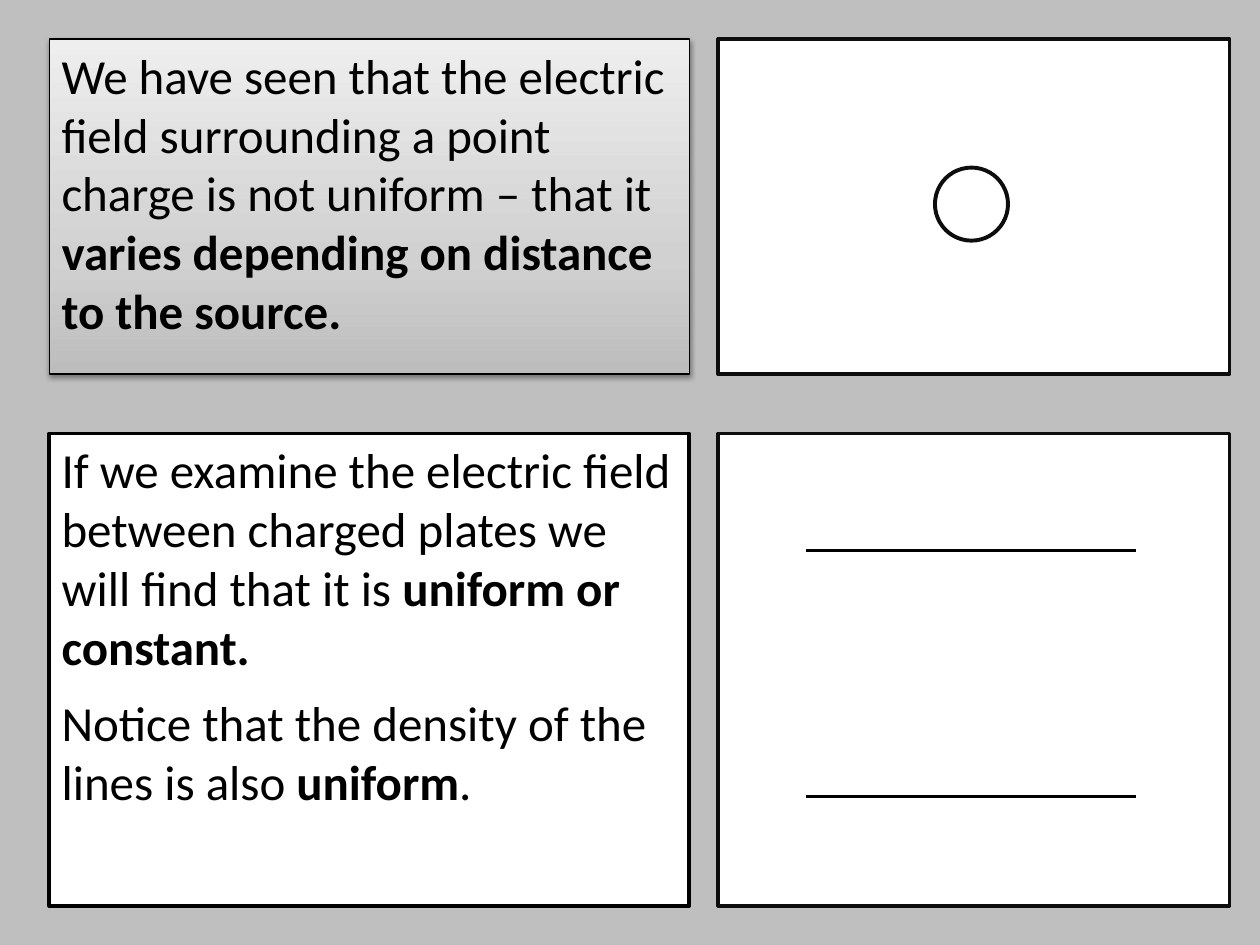
from copy import deepcopy

from lxml.etree import SubElement
from pptx import Presentation
from pptx.dml.color import RGBColor
from pptx.enum.shapes import MSO_CONNECTOR, MSO_SHAPE
from pptx.enum.text import MSO_ANCHOR, PP_ALIGN
from pptx.oxml import parse_xml
from pptx.oxml.ns import nsdecls, qn
from pptx.util import Inches, Pt

BLACK = RGBColor(0x00, 0x00, 0x00)
INK = RGBColor(0x0D, 0x0D, 0x0D)
WHITE = RGBColor(0xFF, 0xFF, 0xFF)
BACKGROUND = RGBColor(0xBF, 0xBF, 0xBF)
GRADIENT = [
    (0, RGBColor(0xBD, 0xBD, 0xBD)),
    (0.35, RGBColor(0xD1, 0xD1, 0xD1)),
    (1, RGBColor(0xEE, 0xEE, 0xEE)),
]

# Each paragraph is a list of (text, bold) runs.
POINT_CHARGE = [
    [("We have seen that the electric field surrounding a point charge "
      "is not uniform – that it ", False),
     ("varies depending on distance to the source.", True)],
]
CHARGED_PLATES = [
    [("If we examine the electric field between charged plates "
      "we will find that it is ", False),
     ("uniform or constant.", True)],
    [("Notice that the density of the lines is also ", False),
     ("uniform", True), (".", False)],
]

# Columns are (left, width), rows are (top, height), in inches.
TEXT_COL, DIAGRAM_COL = (0.39, 5.08), (5.7, 4.06)
TOP_ROW, BOTTOM_ROW = (0.31, 2.66), (3.44, 3.75)
CHARGE_LEFT, CHARGE_TOP, CHARGE_SIZE = 7.42, 1.33, 0.58
PLATE_LEFT, PLATE_RIGHT = 6.4, 9.02
PLATE_HEIGHTS = (4.37, 6.32)


def add_outlined(s, kind, col, row, line=INK, width=2):
    (left, w), (top, h) = col, row
    sp = s.shapes.add_shape(kind, *map(Inches, (left, top, w, h)))
    sp.shadow.inherit = False
    sp.fill.solid()
    sp.fill.fore_color.rgb = WHITE
    sp.line.color.rgb = line
    sp.line.width = Pt(width)
    return sp


def write_text(sp, paragraphs, size=28, font="Calibri", color=BLACK, after=10):
    tf = sp.text_frame
    tf.word_wrap = True
    tf.vertical_anchor = MSO_ANCHOR.TOP
    for i, runs in enumerate(paragraphs):
        p = tf.add_paragraph() if i else tf.paragraphs[0]
        p.alignment = PP_ALIGN.LEFT
        p.space_after = Pt(after)
        for text, bold in runs:
            r = p.add_run()
            r.text = text
            r.font.name = font
            r.font.size = Pt(size)
            r.font.bold = bold
            r.font.color.rgb = color


def shade(sp):
    """Fill with the upward grey gradient and add a soft shadow below."""
    sp.fill.gradient()
    sp.fill.gradient_angle = 90
    spPr = sp._element.spPr
    stops = spPr.find(qn("a:gradFill")).find(qn("a:gsLst"))
    stops.insert(1, deepcopy(stops[0]))
    for stop, (position, color) in zip(sp.fill.gradient_stops, GRADIENT):
        stop.position = position
        stop.color.rgb = color
    spPr.find(qn("a:effectLst")).append(parse_xml(
        f'<a:outerShdw {nsdecls("a")} blurRad="{Pt(3.1)}" dist="{Pt(1.6)}" '
        'dir="5400000" rotWithShape="0"><a:srgbClr val="000000">'
        '<a:alpha val="38000"/></a:srgbClr></a:outerShdw>'))


def add_plate(s, y):
    line = s.shapes.add_connector(
        MSO_CONNECTOR.STRAIGHT,
        Inches(PLATE_LEFT), Inches(y), Inches(PLATE_RIGHT), Inches(y))
    line.line.color.rgb = BLACK
    line.line.width = Pt(2)
    SubElement(line._element.spPr, qn("a:effectLst"))


def main():
    prs = Presentation()
    prs.slide_width, prs.slide_height = Inches(10), Inches(7.5)
    s = prs.slides.add_slide(prs.slide_layouts[6])
    s.background.fill.solid()
    s.background.fill.fore_color.rgb = BACKGROUND

    add_outlined(s, MSO_SHAPE.RECTANGLE, DIAGRAM_COL, TOP_ROW)
    sp = add_outlined(s, MSO_SHAPE.RECTANGLE, TEXT_COL, TOP_ROW, BLACK, 0.75)
    shade(sp)
    write_text(sp, POINT_CHARGE)
    add_outlined(s, MSO_SHAPE.OVAL, (CHARGE_LEFT, CHARGE_SIZE),
                 (CHARGE_TOP, CHARGE_SIZE), width=2.25)

    sp = add_outlined(s, MSO_SHAPE.RECTANGLE, TEXT_COL, BOTTOM_ROW, BLACK)
    write_text(sp, CHARGED_PLATES)
    add_outlined(s, MSO_SHAPE.RECTANGLE, DIAGRAM_COL, BOTTOM_ROW)
    for y in PLATE_HEIGHTS:
        add_plate(s, y)

    prs.save("out.pptx")


if __name__ == "__main__":
    main()
